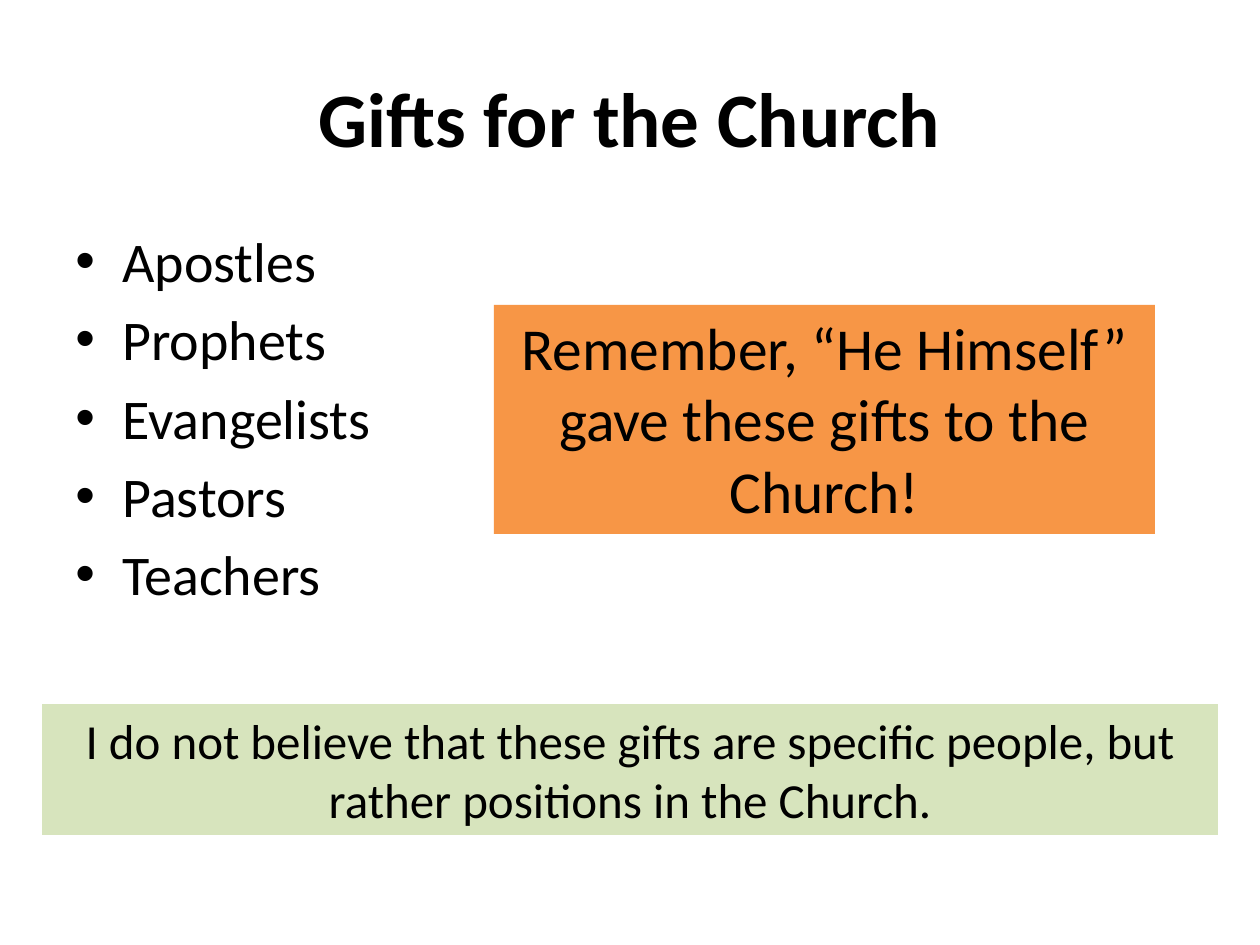
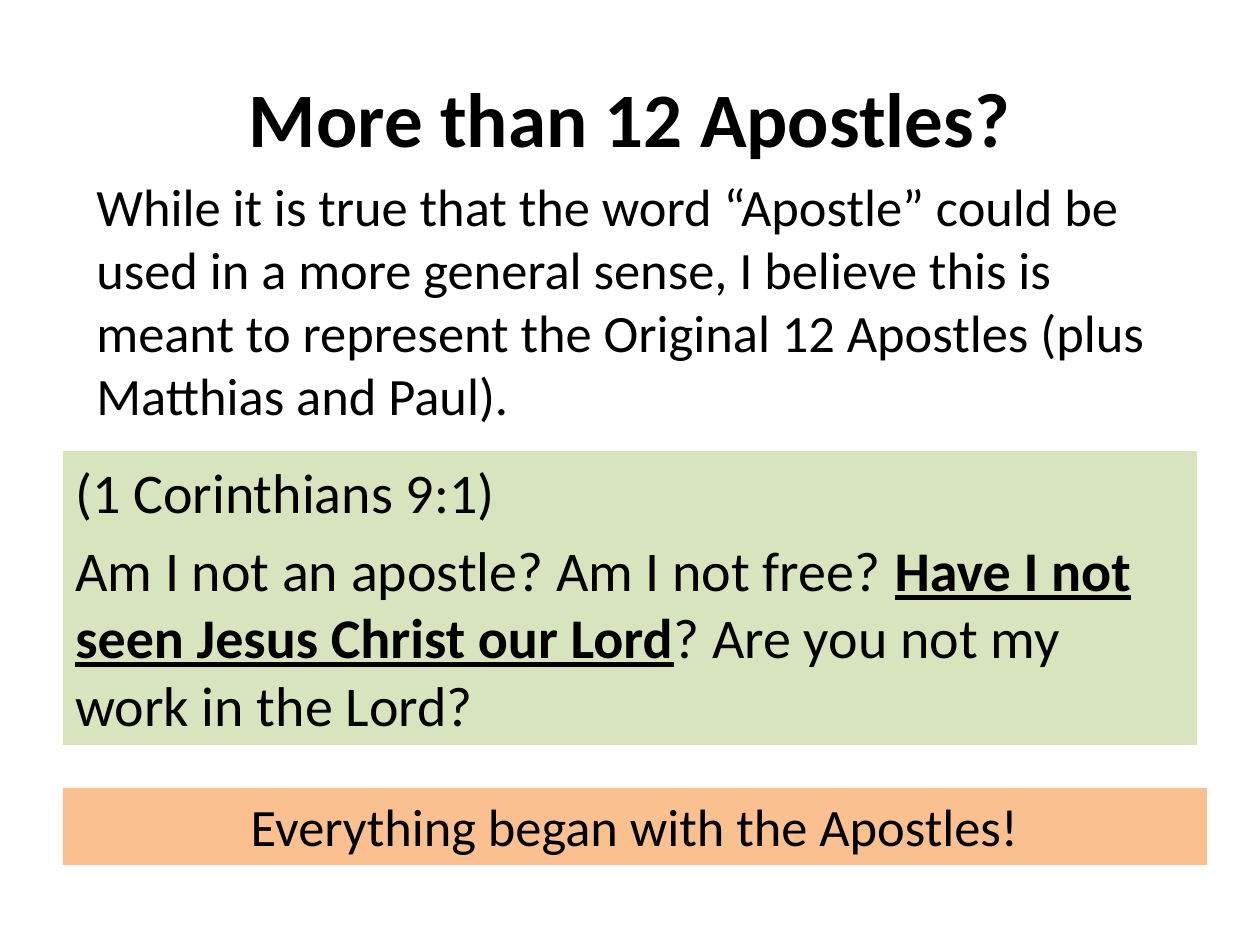
import pptx
import pptx.dml.color
import pptx.enum.shapes
import pptx.enum.text
import pptx.util
from lxml import etree

SCALE = 914400 / 126
FONT = "Calibri"
BLACK, GREEN = "000000", "D7E4BD"
ORANGE, PEACH = "F79646", "FAC090"
ALIGN = pptx.enum.text.PP_ALIGN
ANCHOR = pptx.enum.text.MSO_ANCHOR


def px(count):
    return pptx.util.Emu(round(count * SCALE))


def color(code):
    return pptx.dml.color.RGBColor.from_string(code)


def bullet(para):
    props = para._p.get_or_add_pPr()
    props.set("marL", str(px(47)))
    props.set("indent", str(px(-47)))
    space = "{http://schemas.openxmlformats.org/drawingml/2006/main}"
    etree.SubElement(props, space + "buFont", typeface="Arial")
    etree.SubElement(props, space + "buChar", char="•")


def write(shape, *lines, size=32, bold=False, align=ALIGN.LEFT,
          anchor=ANCHOR.TOP, before=0, dots=False):
    """Put one paragraph per line; parts between ** marks are bold, underlined."""
    frame = shape.text_frame
    frame.word_wrap = True
    frame.vertical_anchor = anchor
    for index, line in enumerate(lines):
        para = frame.add_paragraph() if index else frame.paragraphs[0]
        para.alignment = align
        para.space_before = pptx.util.Pt(before)
        if dots:
            bullet(para)
        for order, part in enumerate(line.split("**")):
            strong = order % 2 == 1
            run = para.add_run()
            run.text = part
            font = run.font
            font.name = FONT
            font.size = pptx.util.Pt(size)
            font.bold = bold or strong
            font.underline = strong
            font.color.rgb = color(BLACK)


def label(slide, box, *lines, **style):
    shape = slide.shapes.add_textbox(*map(px, box))
    write(shape, *lines, **style)


def panel(slide, box, fill, *lines, **style):
    kind = pptx.enum.shapes.MSO_SHAPE.RECTANGLE
    shape = slide.shapes.add_shape(kind, *map(px, box))
    shape.shadow.inherit = False
    shape.fill.solid()
    shape.fill.fore_color.rgb = color(fill)
    shape.line.fill.background()
    write(shape, *lines, **style)


def start(deck, title):
    """Add a blank slide with its title."""
    slide = deck.slides.add_slide(deck.slide_layouts[6])
    label(slide, (63, 38, 1134, 157), title, size=44, bold=True,
          align=ALIGN.CENTER, anchor=ANCHOR.MIDDLE)
    return slide


def gifts(deck):
    slide = start(deck, "Gifts for the Church")
    label(slide, (63, 220, 1134, 462), "Apostles", "Prophets", "Evangelists",
          "Pastors", "Teachers", before=6.4, dots=True)
    panel(slide, (494, 305, 661, 229), ORANGE,
          "Remember, “He Himself” gave these gifts to the Church!",
          size=34, align=ALIGN.CENTER)
    panel(slide, (42, 704, 1176, 131), GREEN,
          "I do not believe that these gifts are specific people, "
          "but rather positions in the Church.",
          size=28, align=ALIGN.CENTER)


def twelve(deck):
    slide = start(deck, "More than 12 Apostles?")
    panel(slide, (63, 451, 1134, 294), GREEN,
          "(1 Corinthians 9:1)",
          "Am I not an apostle? Am I not free? "
          "**Have I not seen Jesus Christ our Lord**"
          "? Are you not my work in the Lord?", before=6.4)
    label(slide, (84, 168, 1092, 267),
          "While it is true that the word “Apostle” could be used in a more "
          "general sense, I believe this is meant to represent the Original "
          "12 Apostles (plus Matthias and Paul).", size=30)
    panel(slide, (63, 788, 1144, 77), PEACH,
          "Everything began with the Apostles!", size=30, align=ALIGN.CENTER)


def main():
    deck = pptx.Presentation()
    deck.slide_width, deck.slide_height = px(1260), px(945)
    gifts(deck)
    twelve(deck)
    deck.save("out.pptx")


if __name__ == "__main__":
    main()
